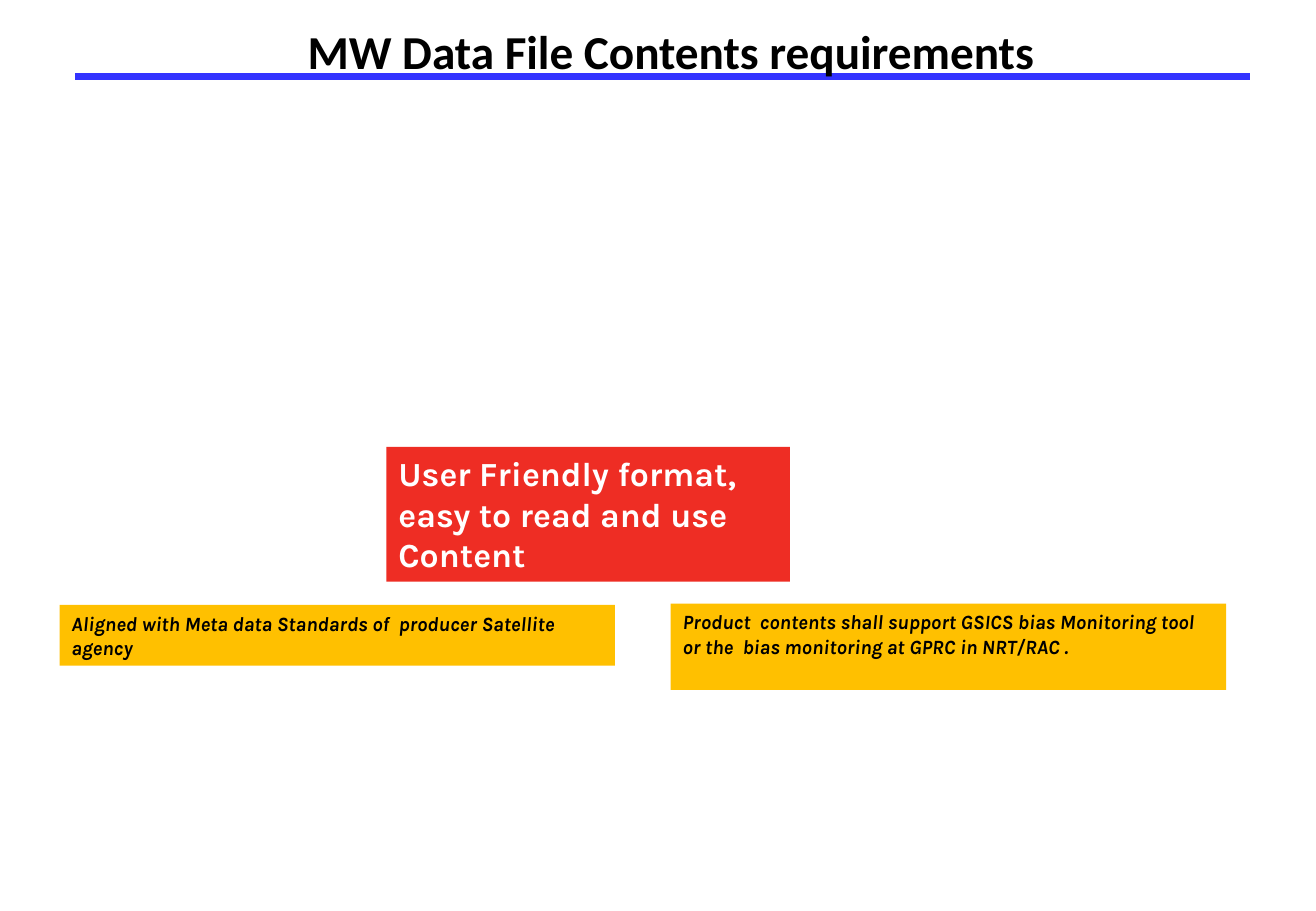
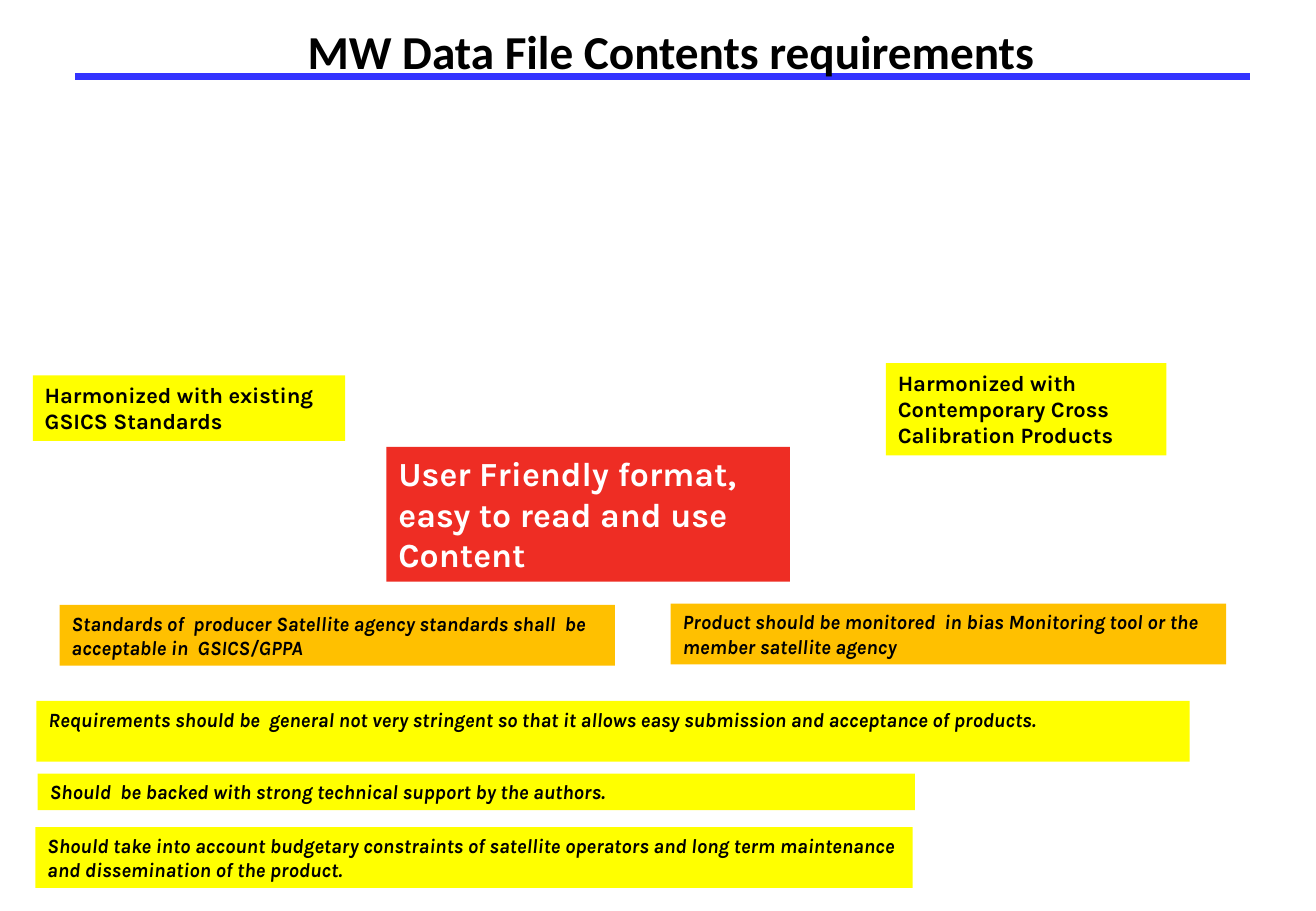
"""Build two slides on the content requirements for MW data files."""
from lxml.etree import SubElement
from pptx import Presentation
from pptx.dml.color import RGBColor
from pptx.enum.shapes import MSO_CONNECTOR, MSO_SHAPE
from pptx.enum.text import MSO_ANCHOR, PP_ALIGN
from pptx.oxml.ns import qn
from pptx.util import Inches, Pt

BLACK = RGBColor(0x00, 0x00, 0x00)
WHITE = RGBColor(0xFF, 0xFF, 0xFF)
BLUE = RGBColor(0x33, 0x33, 0xFF)
RED = RGBColor(0xEE, 0x2D, 0x24)
AMBER = RGBColor(0xFF, 0xC0, 0x00)
YELLOW = RGBColor(0xFF, 0xFF, 0x00)

TITLE = "MW Data File Contents requirements"
GOAL = "User Friendly format, easy to read and use Content"

FIRST_NEEDS = [
    (0.49, 4.98, 4.57, 0.5, AMBER,
     "Aligned with Meta data Standards of  producer Satellite agency"),
    (5.52, 4.97, 4.57, 0.71, AMBER,
     "Product  contents shall support GSICS bias Monitoring tool "
     "or the  bias monitoring at GPRC in NRT/RAC ."),
]
NEXT_NEEDS = [
    (0.49, 4.98, 4.57, 0.5, AMBER,
     "Standards of  producer Satellite agency standards shall  be "
     "acceptable in  GSICS/GPPA"),
    (5.52, 4.97, 4.57, 0.5, AMBER,
     "Product should be monitored  in bias Monitoring tool or the "
     "member satellite agency"),
    (0.3, 5.77, 9.49, 0.5, YELLOW,
     "Requirements should be  general not very stringent so that it "
     "allows easy submission and acceptance of products."),
    (0.31, 6.37, 7.22, 0.3, YELLOW,
     "Should  be backed with strong technical support by the authors."),
    (0.29, 6.81, 7.22, 0.5, YELLOW,
     "Should take into account budgetary constraints of satellite "
     "operators and long term maintenance and dissemination of the product."),
]
LINKS = [
    (0.27, 3.09, 2.57, 0.54, YELLOW,
     "Harmonized with existing GSICS Standards"),
    (7.29, 2.99, 2.31, 0.76, YELLOW,
     "Harmonized with Contemporary Cross Calibration Products"),
]


def set_text(shape, text, size, face, color, align, anchor, slant=False):
    """Write bold text in a shape."""
    frame = shape.text_frame
    frame.text = text
    frame.word_wrap = True
    frame.vertical_anchor = anchor
    para = frame.paragraphs[0]
    para.alignment = align
    font = para.runs[0].font
    font.name, font.size = face, Pt(size)
    font.bold, font.italic = True, slant
    font.color.rgb = color


def add_head(slide):
    """Add the blue rule and the title."""
    y = Inches(0.63)
    rule = slide.shapes.add_connector(
        MSO_CONNECTOR.STRAIGHT, Inches(0.62), y, Inches(10.29), y)
    rule.line.color.rgb = BLUE
    rule.line.width = Pt(4.5)
    SubElement(rule.element.spPr, qn("a:effectLst"))
    title = slide.shapes.add_textbox(
        Inches(0.85), Inches(0), Inches(9.34), Inches(0.84))
    set_text(title, TITLE, 28, "Calibri", BLACK, PP_ALIGN.CENTER,
             MSO_ANCHOR.MIDDLE)


def add_box(slide, need, size, color=BLACK, slant=False):
    """Add a filled box with text at its top left."""
    *place, fill, text = need
    box = slide.shapes.add_shape(MSO_SHAPE.RECTANGLE, *map(Inches, place))
    box.shadow.inherit = False
    box.fill.solid()
    box.fill.fore_color.rgb = fill
    box.line.fill.background()
    set_text(box, text, size, "Karla", color, PP_ALIGN.LEFT,
             MSO_ANCHOR.TOP, slant)


def add_page(deck, needs, links=()):
    """Add a slide with the goal, its needs and its links."""
    slide = deck.slides.add_slide(deck.slide_layouts[6])
    add_head(slide)
    add_box(slide, (3.18, 3.68, 3.32, 1.11, RED, GOAL), 20, WHITE)
    for link in links:
        add_box(slide, link, 13)
    for need in needs:
        add_box(slide, need, 12, slant=True)


def main():
    """Build and save the deck."""
    deck = Presentation()
    deck.slide_width, deck.slide_height = Inches(10.83), Inches(7.5)
    add_page(deck, FIRST_NEEDS)
    add_page(deck, NEXT_NEEDS, LINKS)
    deck.save("out.pptx")


if __name__ == "__main__":
    main()
